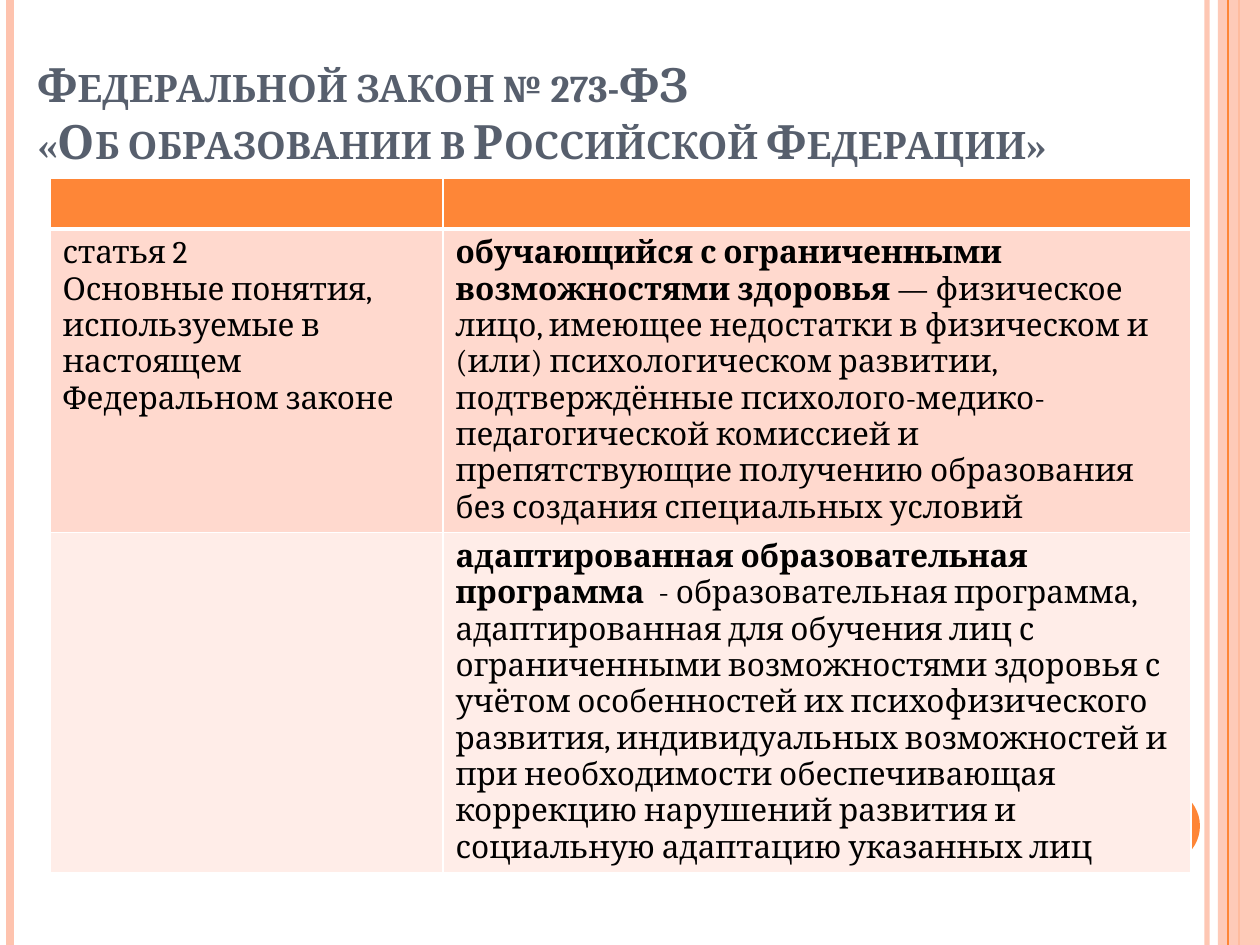
import lxml.etree
import pptx
import pptx.dml.color
import pptx.enum.shapes
import pptx.enum.text
import pptx.oxml
import pptx.oxml.ns
import pptx.util

RGB = pptx.dml.color.RGBColor
WHITE = RGB(0xFF, 0xFF, 0xFF)
BLACK = RGB(0, 0, 0)
SLATE = RGB(0x57, 0x5F, 0x6D)
ORANGE = RGB(0xFE, 0x86, 0x37)
PEACH = RGB(0xFE, 0xC3, 0xAE)
ROW_DARK = RGB(0xFF, 0xD9, 0xCE)
ROW_LIGHT = RGB(0xFF, 0xED, 0xE8)

FONT = "Cambria"
WIDTH, HEIGHT = 1260, 945
COLUMNS = (393, 748)
ROWS = (48, 303, 340)
ROW_FILLS = (ORANGE, ROW_DARK, ROW_LIGHT)

TITLE = "Федеральной закон № 273-ФЗ \n«Об образовании в Российской Федерации»"
ARTICLE = [
    [("статья 2", False)],
    [("Основные понятия, используемые в настоящем Федеральном законе", False)],
]
STUDENT = [[
    ("обучающийся с ограниченными возможностями здоровья ", True),
    ("— физическое лицо, имеющее недостатки в физическом и (или) психологическом "
     "развитии, подтверждённые психолого-медико-педагогической комиссией и "
     "препятствующие получению образования без создания специальных условий", False),
]]
PROGRAMME = [[
    ("адаптированная образовательная программа ", True),
    (" - образовательная программа, адаптированная для обучения лиц с ограниченными "
     "возможностями здоровья с учётом особенностей их психофизического развития, "
     "индивидуальных возможностей и при необходимости обеспечивающая коррекцию "
     "нарушений развития и социальную адаптацию указанных лиц", False),
]]
CELLS = (([[]], [[]]), (ARTICLE, STUDENT), ([[]], PROGRAMME))


def px(value):
    """Turn pixels into EMU."""
    return pptx.util.Emu(round(value * 914400 / 126))


def set_opacity(shape, percent):
    """Make the colour of a shape or connector partly transparent."""
    for colour in shape._element.spPr.iter(pptx.oxml.ns.qn("a:srgbClr")):
        alpha = lxml.etree.SubElement(colour, pptx.oxml.ns.qn("a:alpha"))
        alpha.set("val", str(percent * 1000))


def write_text(frame, paragraphs, size=18, colour=BLACK, small_caps=False):
    """Fill a text frame with paragraphs of (text, bold) spans."""
    for index, spans in enumerate(paragraphs):
        para = frame.add_paragraph() if index else frame.paragraphs[0]
        para.alignment = pptx.enum.text.PP_ALIGN.LEFT
        for text, bold in spans:
            for number, line in enumerate(text.split("\n")):
                if number:
                    para.add_line_break()
                span = para.add_run()
                span.text = line
                span.font.name = FONT
                span.font.size = pptx.util.Pt(size)
                span.font.bold = bold
                span.font.color.rgb = colour
                if small_caps:
                    span.font._element.set("cap", "small")
        if not spans:
            para._p.get_or_add_endParaRPr().set("sz", str(size * 100))


def add_stripe(page, x, colour, width, opacity=100):
    """Draw a vertical line over the full height of the page."""
    stripe = page.shapes.add_connector(
        pptx.enum.shapes.MSO_CONNECTOR.STRAIGHT, px(x), 0, px(x), px(HEIGHT))
    stripe.line.color.rgb = colour
    stripe.line.width = pptx.util.Pt(width)
    lxml.etree.SubElement(stripe._element.spPr, pptx.oxml.ns.qn("a:effectLst"))
    if opacity < 100:
        set_opacity(stripe, opacity)


def add_block(page, kind, left, top, width, height, colour, opacity=100):
    """Draw a filled shape without outline."""
    block = page.shapes.add_shape(kind, px(left), px(top), px(width), px(height))
    block.shadow.inherit = False
    block.fill.solid()
    block.fill.fore_color.rgb = colour
    block.line.fill.background()
    if opacity < 100:
        set_opacity(block, opacity)


def add_decoration(page):
    """Draw the side stripes and the round marker."""
    kinds = pptx.enum.shapes.MSO_SHAPE
    add_stripe(page, 1207, PEACH, 3, opacity=93)
    add_stripe(page, 10, PEACH, 4.5)
    add_stripe(page, 1239, ORANGE, 1.5)
    add_block(page, kinds.RECTANGLE, 1218, 0, 42, HEIGHT, PEACH, opacity=87)
    add_stripe(page, 1228, ORANGE, 0.75)
    add_block(page, kinds.OVAL, 1124, 788, 76, 76, ORANGE)


def add_title(page):
    """Place and format the title placeholder."""
    title = page.shapes.title
    title.left, title.top, title.width, title.height = px(25), px(38), px(1176), px(137)
    frame = title.text_frame
    frame.word_wrap = True
    frame.auto_size = pptx.enum.text.MSO_AUTO_SIZE.NONE
    frame.vertical_anchor = pptx.enum.text.MSO_ANCHOR.BOTTOM
    write_text(frame, [[(TITLE, True)]], size=27, colour=SLATE, small_caps=True)


def set_borders(cell, **widths):
    """Give a cell white borders, with widths in points by side letter."""
    properties = cell._tc.get_or_add_tcPr()
    for side in "LRTB":
        width = pptx.util.Pt(widths.get(side, 1))
        properties.append(pptx.oxml.parse_xml(
            f'<a:ln{side} {pptx.oxml.ns.nsdecls("a")} w="{width}"><a:solidFill>'
            f'<a:srgbClr val="{WHITE}"/></a:solidFill></a:ln{side}>'))


def add_definitions(page):
    """Build the table of terms defined by the law."""
    table = page.shapes.add_table(
        len(ROWS), len(COLUMNS), px(50), px(178), px(sum(COLUMNS)), px(sum(ROWS))).table
    for column, width in zip(table.columns, COLUMNS):
        column.width = px(width)
    for row_index, height in enumerate(ROWS):
        table.rows[row_index].height = px(height)
        for column_index, paragraphs in enumerate(CELLS[row_index]):
            cell = table.cell(row_index, column_index)
            set_borders(cell, T=3 if row_index == 1 else 1, B=3 if row_index == 0 else 1)
            cell.fill.solid()
            cell.fill.fore_color.rgb = ROW_FILLS[row_index]
            write_text(cell.text_frame, paragraphs)


def main():
    """Build and save the slide."""
    deck = pptx.Presentation()
    deck.slide_width, deck.slide_height = px(WIDTH), px(HEIGHT)
    page = deck.slides.add_slide(deck.slide_layouts[5])
    page.background.fill.solid()
    page.background.fill.fore_color.rgb = WHITE
    add_decoration(page)
    add_title(page)
    add_definitions(page)
    deck.save("out.pptx")


if __name__ == "__main__":
    main()
